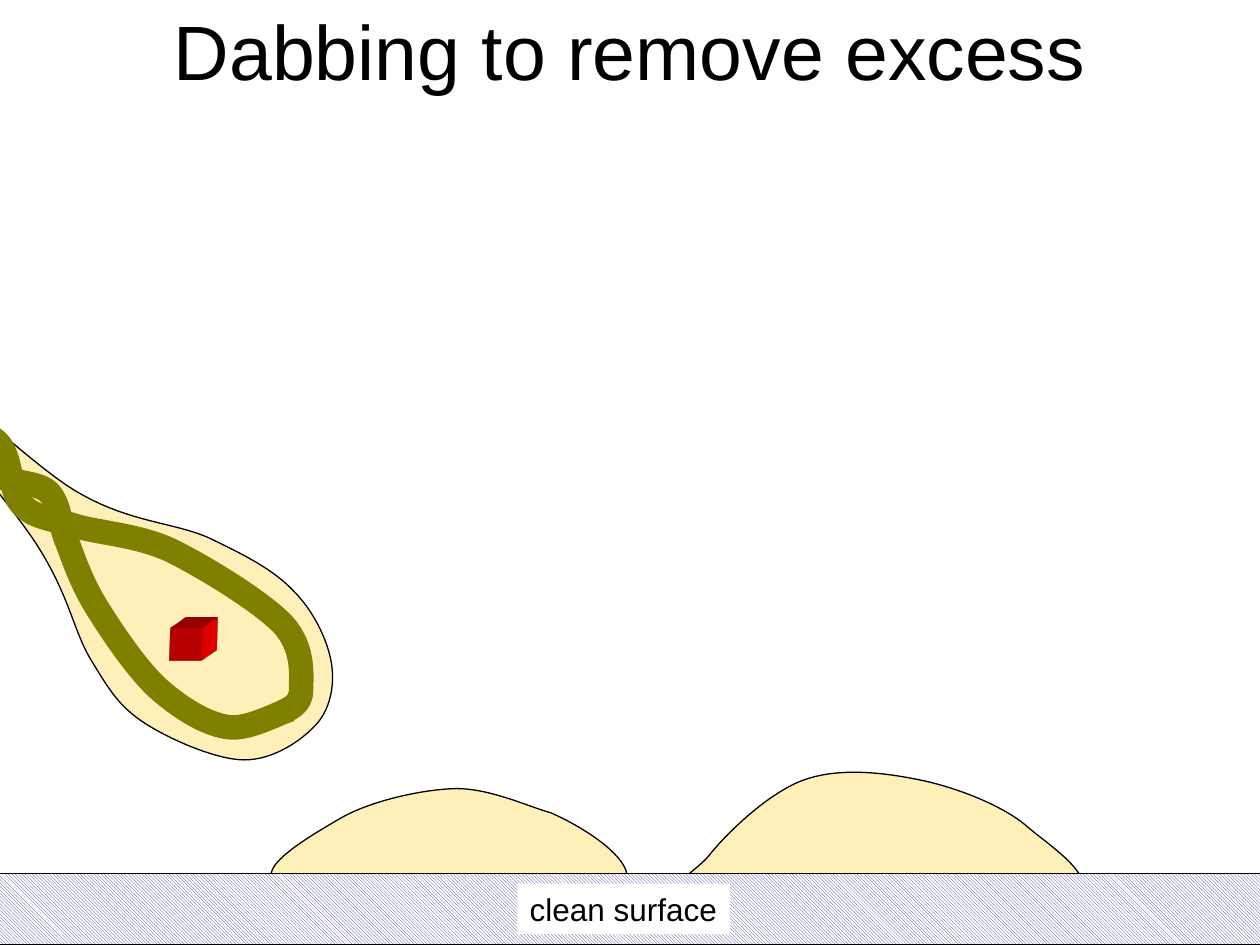
import lxml.etree
import pptx
import pptx.util
import pptx.dml.color
import pptx.enum.dml
import pptx.enum.shapes
import pptx.enum.text
import pptx.oxml
import pptx.oxml.ns

Pt = pptx.util.Pt
TEXT = pptx.enum.text
qn = pptx.oxml.ns.qn

COLORS = {
    "paper": "FFFFFF", "ink": "000000", "liquid": "FFF0B9",
    "loop": "808000", "hatch": "333399", "crystal": "FF0000",
}
FONT = "Arial"
TITLE = "Dabbing to remove excess"
SURFACE_LABEL = "clean surface"

# Bezier outlines: a start point, then two control points and an end point per row
SMALL_MOUND = [
    (314.6, 464.4),
    (345.6, 478.1), (373.7, 502.6), (348.5, 509.8),
    (322.6, 517), (187.9, 514.1), (162.7, 506.9),
    (137.5, 499.7), (179.3, 476.6), (195.1, 467.3),
    (211.7, 457.9), (239.8, 451.4), (259.2, 450.7),
    (279.4, 450), (303.1, 461.5), (314.6, 464.4),
]
LARGE_MOUND = [
    (459.4, 445.7),
    (479.5, 438.5), (504.7, 441.4), (525.6, 445.7),
    (546.5, 450), (572.4, 460.1), (586.1, 471.6),
    (599, 483.1), (637.9, 506.9), (607, 514.8),
    (575.3, 523.4), (430.6, 524.9), (396.7, 520.6),
    (362.9, 517), (393.8, 501.8), (404.6, 489.6),
    (414.7, 476.6), (439.2, 452.9), (459.4, 445.7),
]
DROP = [
    (119.5, 307.4),
    (140.4, 317.5), (156.2, 325.4), (167.8, 337.7),
    (179.3, 349.2), (187.2, 365.8), (189.4, 378.7),
    (191.5, 391.7), (188.6, 405.4), (180.7, 414),
    (172.1, 423.4), (156.2, 434.2), (139.7, 434.2),
    (123.8, 434.2), (97.2, 422.6), (82.8, 413.3),
    (68.4, 403.9), (62.6, 394.6), (52.6, 378),
    (41.8, 360.7), (40.3, 341.3), (20.9, 311),
    (0.7, 280.1), (-69.8, 198.7), (-66.2, 193.7),
    (-62.6, 187.9), (11.5, 261.4), (42.5, 280.1),
    (73.4, 298.8), (98.6, 298.1), (119.5, 307.4),
]
UPPER_STRAND = [
    (162, 406.8),
    (164.2, 405.4), (172.1, 403.2), (172.1, 394.6),
    (172.1, 386.6), (174.2, 370.8), (162, 357.1),
    (149.8, 344.2), (118.1, 324.7), (97.9, 314.6),
    (77.8, 305.3), (55.4, 304.6), (41.8, 300.2),
    (27.4, 295.9), (19.4, 295.9), (12.2, 288),
    (5, 280.1), (7.2, 261.4), (-1.4, 252.7),
    (-10.1, 244.1), (-30.2, 244.8), (-38.9, 236.2),
    (-47.5, 226.8), (-43.9, 208.1), (-52.6, 200.2),
    (-61.2, 191.5), (-83.5, 188.6), (-90, 186.5),
]
LOWER_STRAND = [
    (166.3, 405.4),
    (159.8, 406.8), (141.8, 417.6), (129.6, 415.4),
    (116.6, 413.3), (102.2, 403.9), (90, 393.1),
    (77.8, 381.6), (64.8, 362.2), (56.2, 348.5),
    (47.5, 334.8), (43.2, 322.6), (38.9, 311),
    (33.8, 299.5), (34.6, 288), (27.4, 280.8),
    (19.4, 274.3), (0.7, 276.5), (-7.9, 267.8),
    (-16.6, 259.9), (-15.8, 239), (-25.2, 230.4),
    (-33.8, 222.5), (-52.6, 225.4), (-61.2, 216.7),
    (-69.8, 208.1), (-72.7, 185.8), (-75.6, 179.3),
]
# Depth that turns the crystal's square into a cube
CRYSTAL_DEPTH = (
    '<a:scene3d {ns}><a:camera prst="legacyObliqueTopRight">'
    '<a:rot lat="21240000" lon="0" rev="0"/></a:camera>'
    '<a:lightRig rig="legacyFlat3" dir="b"/></a:scene3d>',
    '<a:sp3d {ns} extrusionH="311000" prstMaterial="legacyMatte">'
    '<a:extrusionClr><a:srgbClr val="{color}"/></a:extrusionClr></a:sp3d>',
)


def rgb(name):
    return pptx.dml.color.RGBColor.from_string(COLORS[name])


def paint(shape, fill=None, line=None, width=0.75):
    shape.shadow.inherit = False
    if fill:
        shape.fill.solid()
        shape.fill.fore_color.rgb = rgb(fill)
    else:
        shape.fill.background()
    if line:
        shape.line.color.rgb = rgb(line)
        shape.line.width = Pt(width)
    else:
        shape.line.fill.background()


def add_curve(parent, points, close=True, **style):
    corners = [(Pt(x), Pt(y)) for x, y in points]
    builder = parent.build_freeform(*corners[0])
    builder.add_line_segments(corners[1:], close=close)
    curve = builder.convert_to_shape()
    # Every three straight segments become one Bezier segment
    segments = list(curve.element.iter(qn("a:lnTo")))
    for first in range(0, len(points) - 1, 3):
        bezier = lxml.etree.Element(qn("a:cubicBezTo"))
        segments[first].addprevious(bezier)
        for segment in segments[first:first + 3]:
            bezier.append(segment[0])
            segment.getparent().remove(segment)
    paint(curve, **style)


def add_rectangle(left, top, width, height, **style):
    rectangle = shapes.add_shape(pptx.enum.shapes.MSO_SHAPE.RECTANGLE,
                                 Pt(left), Pt(top), Pt(width), Pt(height))
    paint(rectangle, **style)
    return rectangle


def write(shape, words, size, alignment, wrap):
    frame = shape.text_frame
    frame.text = words
    frame.word_wrap = wrap
    frame.vertical_anchor = TEXT.MSO_ANCHOR.MIDDLE
    paragraph = frame.paragraphs[0]
    paragraph.alignment = alignment
    font = paragraph.runs[0].font
    font.name, font.size = FONT, Pt(size)
    font.color.rgb = rgb("ink")


presentation = pptx.Presentation()
presentation.slide_width, presentation.slide_height = Pt(720), Pt(540)
slide = presentation.slides.add_slide(presentation.slide_layouts[6])
shapes = slide.shapes

# Mounds left on the surface
for mound in (SMALL_MOUND, LARGE_MOUND):
    add_curve(shapes, mound, fill="liquid", line="ink")

# Title on its white band
add_rectangle(0, 0, 720, 49, fill="paper")
title = shapes.add_textbox(Pt(36), Pt(-16.5), Pt(648), Pt(90))
write(title, TITLE, 44, TEXT.PP_ALIGN.CENTER, True)

# Hatched surface and its label
surface = add_rectangle(-27, 499, 776, 41, line="ink")
surface.fill.patterned()
surface.fill.pattern = pptx.enum.dml.MSO_PATTERN.LIGHT_DOWNWARD_DIAGONAL
surface.fill.fore_color.rgb = rgb("hatch")
surface.fill.back_color.rgb = rgb("paper")
label = add_rectangle(295.6, 505, 121.7, 28.8, fill="paper")
write(label, SURFACE_LABEL, 18, TEXT.PP_ALIGN.LEFT, False)
label.text_frame.auto_size = TEXT.MSO_AUTO_SIZE.SHAPE_TO_FIT_TEXT

# Drop held by the twisted loop
add_curve(shapes, DROP, fill="liquid", line="ink")
loop = shapes.add_group_shape()
for strand in (UPPER_STRAND, LOWER_STRAND):
    add_curve(loop.shapes, strand, close=False, line="loop", width=14)

# Crystal cube inside the drop
crystal = add_rectangle(97.2, 359.3, 18, 18, fill="crystal")
for part in CRYSTAL_DEPTH:
    markup = part.format(ns=pptx.oxml.ns.nsdecls("a"), color=COLORS["crystal"])
    crystal.element.spPr.append(pptx.oxml.parse_xml(markup))

presentation.save("out.pptx")
